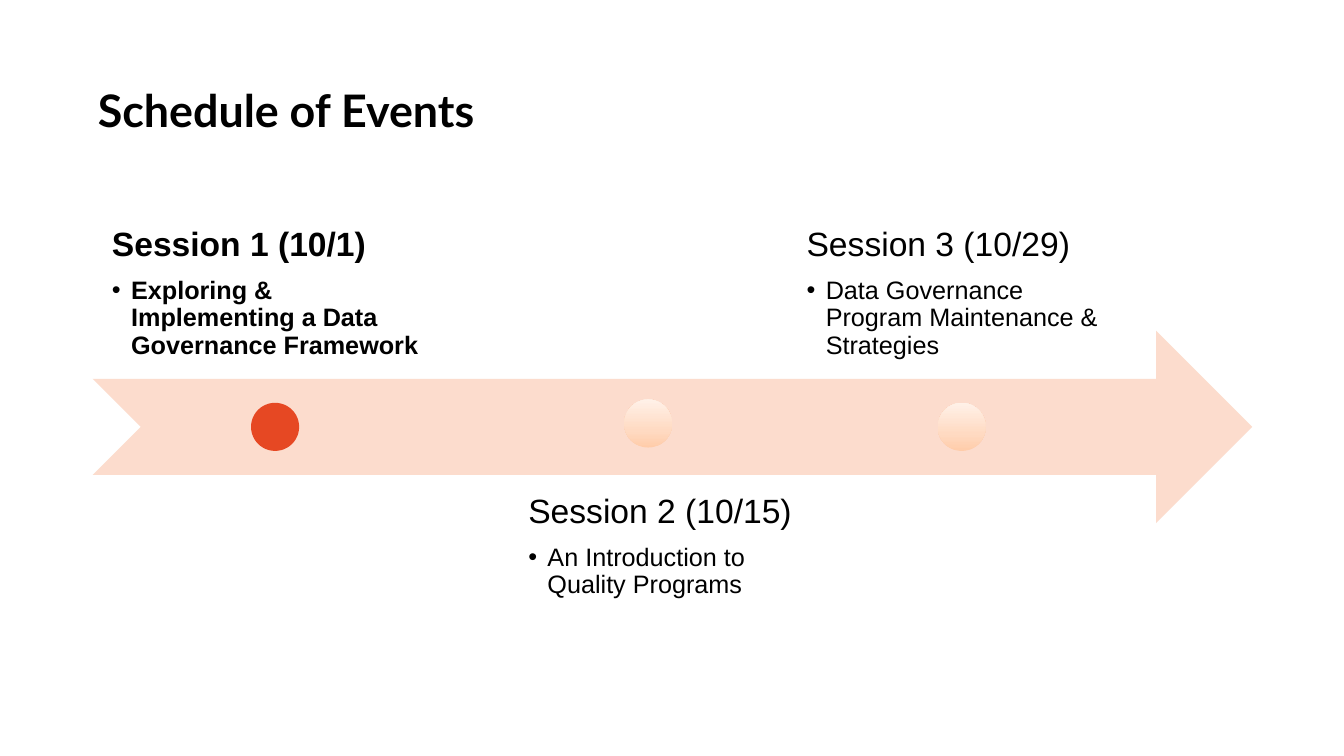
from copy import deepcopy

from lxml import etree
from pptx import Presentation, util as u
from pptx.dml.color import RGBColor
from pptx.enum import shapes, text
from pptx.oxml.ns import qn

BLACK = RGBColor(0, 0, 0)
ARROW = RGBColor(0xFC, 0xDC, 0xCD)
CURRENT = RGBColor(0xE6, 0x48, 0x23)
UPCOMING = [(0, RGBColor(0xFF, 0xCC, 0xA9)), (0.35, RGBColor(0xFF, 0xDA, 0xC2)),
            (1, RGBColor(0xFF, 0xF1, 0xE8))]

COLS, ROWS = 115, 10  # timeline grid
# heading, topic, text column, text width, dot column, dot row, above arrow, current
SESSIONS = [
    ("Session 1 (10/1)", "Exploring & Implementing a Data Governance Framework",
     0, 36.2, 15.7, 4.5, True, True),
    ("Session 2 (10/15)", "An Introduction to Quality Programs",
     41.3, 30.3, 52.7, 4.43, False, False),
    ("Session 3 (10/29)", "Data Governance Program Maintenance & Strategies",
     68.9, 34.5, 83.8, 4.5, True, False),
]


def add_text(s, box, inset, anchor):
    tf = s.shapes.add_textbox(*box).text_frame
    tf.word_wrap = True
    tf.vertical_anchor = anchor
    tf.margin_left = tf.margin_right = tf.margin_top = tf.margin_bottom = u.Inches(inset)
    return tf


def style(p, font, size, bold):
    p.line_spacing = 0.9
    f = p.runs[0].font
    f.name, f.size, f.bold = font, u.Pt(size), bold
    f.color.rgb = BLACK


def add_bullet(p):
    pPr = p._p.get_or_add_pPr()
    indent = u.Inches(0.19)
    pPr.set("marL", str(indent))
    pPr.set("indent", str(-indent))
    etree.SubElement(pPr, qn("a:buFont")).set("typeface", "Arial")
    etree.SubElement(pPr, qn("a:buChar")).set("char", "•")


def add_plain_shape(s, kind, box):
    sp = s.shapes.add_shape(kind, *box)
    sp.shadow.inherit = False
    sp.line.fill.background()
    return sp


def fill_upcoming(fill):
    """Three-stop gradient, light at the top."""
    fill.gradient()
    fill.gradient_angle = 90
    first = fill.gradient_stops[0]._gs
    first.addnext(deepcopy(first))
    for stop, (position, color) in zip(fill.gradient_stops, UPCOMING):
        stop.position = position
        stop.color.rgb = color


def add_title(s, box):
    tf = add_text(s, box, 0.05, text.MSO_ANCHOR.MIDDLE)
    tf.text = "Schedule of Events"
    style(tf.paragraphs[0], "Lato", 32, True)


def add_session_text(s, box, heading, topic, above, bold):
    tf = add_text(s, box, 0.19, text.MSO_ANCHOR.BOTTOM if above else text.MSO_ANCHOR.TOP)
    tf.text = f"{heading}\n{topic}"
    head, item = tf.paragraphs
    add_bullet(item)
    item.level = 1
    style(head, "Arial", 24, bold)
    style(item, "Arial", 18, bold)
    head.space_after = u.Pt(10)


def add_timeline(s, box):
    left, top, width, height = box
    col, row = width / COLS, height / ROWS

    def cell(c, r, w, h):
        return int(left + c * col), int(top + r * row), int(w * col), int(h * row)

    arrow = add_plain_shape(s, shapes.MSO_SHAPE.NOTCHED_RIGHT_ARROW, cell(0, 3, COLS, 4))
    arrow.fill.solid()
    arrow.fill.fore_color.rgb = ARROW
    for heading, topic, c, w, dot_col, dot_row, above, current in SESSIONS:
        add_session_text(s, cell(c, 0 if above else 6, w, 4), heading, topic, above, current)
        dot = add_plain_shape(s, shapes.MSO_SHAPE.OVAL, cell(dot_col, dot_row, row / col, 1))
        if current:
            dot.fill.solid()
            dot.fill.fore_color.rgb = CURRENT
        else:
            fill_upcoming(dot.fill)


def main():
    prs = Presentation()
    prs.slide_width, prs.slide_height = u.Inches(13.33), u.Inches(7.5)
    s = prs.slides.add_slide(prs.slide_layouts[6])
    left, width = u.Inches(0.92), u.Inches(11.5)
    add_title(s, (left, u.Inches(0.4), width, u.Inches(1.45)))
    add_timeline(s, (left, u.Inches(1.85), width, u.Inches(4.77)))
    prs.save("out.pptx")


if __name__ == "__main__":
    main()
